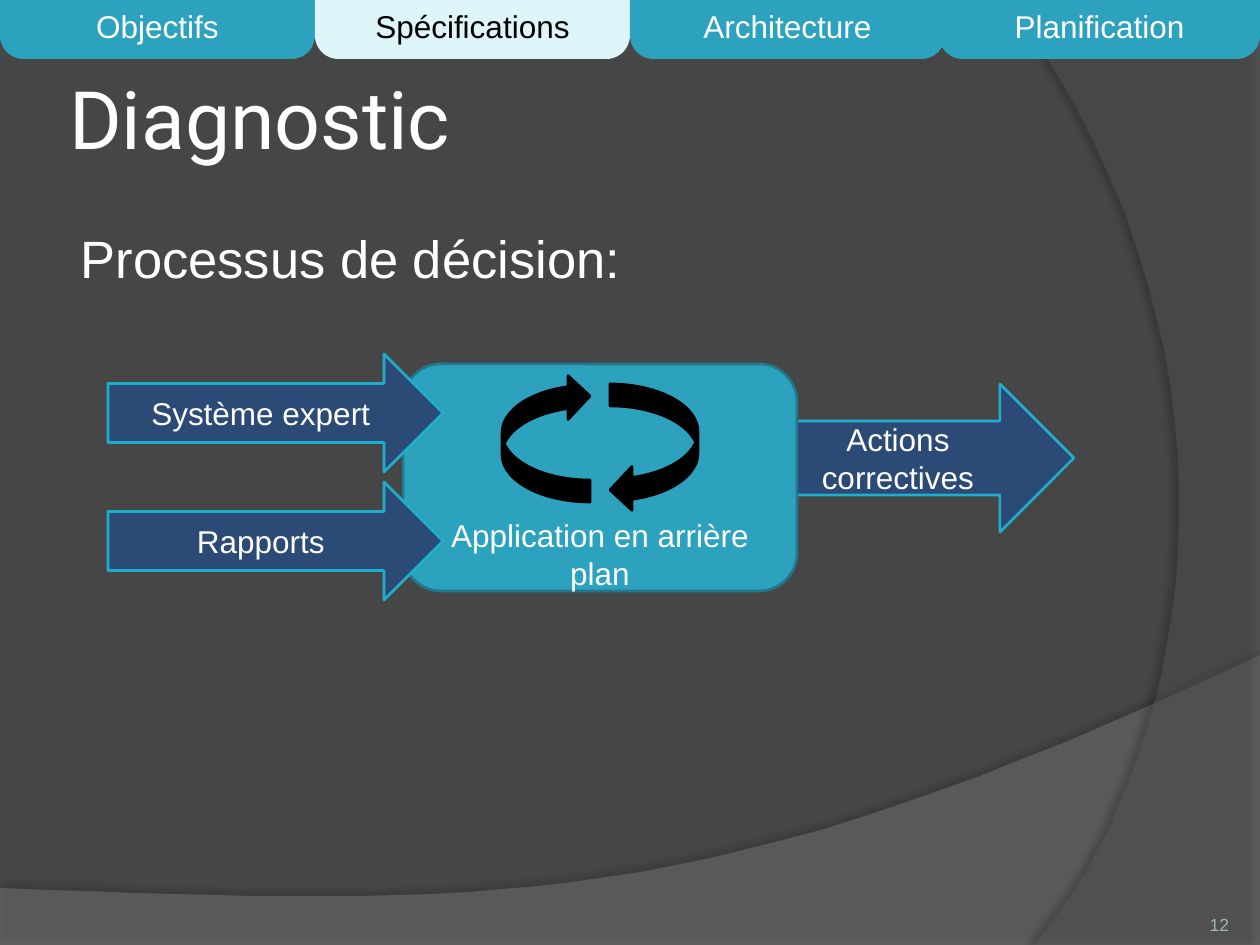
from lxml.etree import SubElement
from pptx import Presentation
from pptx.dml.color import RGBColor
from pptx.enum.shapes import MSO_SHAPE
from pptx.enum.text import MSO_ANCHOR, MSO_AUTO_SIZE, PP_ALIGN
from pptx.oxml.ns import qn
from pptx.util import Emu, Pt

SCALE = 914400 / 126
COLORS = {
    "background": "464646", "wave": "7F7F7F", "arc": "5E5E5E", "shadow": "000000",
    "teal": "2DA2BF", "teal_edge": "21788D", "navy": "2B4A76", "cyan": "1FAECD",
    "pale": "DEF5FA", "black": "000000", "white": "FFFFFF", "number": "A4B5B9",
}


def emu(px):
    return Emu(round(px * SCALE))


def rgb(name):
    return RGBColor.from_string(COLORS[name])


def bezier(start, first, second, end, steps=32):
    for step in range(steps + 1):
        t = step / steps
        u = 1 - t
        yield tuple(
            round(u**3 * a + 3 * u * u * t * b + 3 * u * t * t * c + t**3 * d)
            for a, b, c, d in zip(start, first, second, end)
        )


class Deck:
    font = "Arial"
    label_size = 18

    def __init__(self, width, height):
        self.presentation = Presentation()
        self.presentation.slide_width = emu(width)
        self.presentation.slide_height = emu(height)
        self.slide = self.presentation.slides.add_slide(self.presentation.slide_layouts[1])
        fill = self.slide.background.fill
        fill.solid()
        fill.fore_color.rgb = rgb("background")

    def paint(self, shape, fill, edge=None):
        shape.shadow.inherit = False
        shape.fill.solid()
        shape.fill.fore_color.rgb = rgb(fill)
        if edge:
            shape.line.color.rgb = rgb(edge)
            shape.line.width = Pt(1.5)
        else:
            shape.line.fill.background()

    def label(self, shape, text, size, color="white", align=PP_ALIGN.LEFT,
              anchor=MSO_ANCHOR.MIDDLE, font=None):
        frame = shape.text_frame
        frame.word_wrap = True
        frame.auto_size = MSO_AUTO_SIZE.NONE
        frame.vertical_anchor = anchor
        paragraph = frame.paragraphs[0]
        paragraph.alignment = align
        paragraph.space_before = Pt(0)
        run = paragraph.add_run()
        run.text = text
        run.font.size = Pt(size)
        run.font.name = font or self.font
        run.font.color.rgb = rgb(color)
        return paragraph

    def inset(self, shape, left, top, right, bottom):
        frame = shape.text_frame
        frame.margin_left, frame.margin_top = emu(left), emu(top)
        frame.margin_right, frame.margin_bottom = emu(right), emu(bottom)

    def decor(self, points, fill, opacity, shadow_opacity, distance, direction):
        start, *others = points
        builder = self.slide.shapes.build_freeform(*start, scale=SCALE)
        builder.add_line_segments(others, close=True)
        shape = builder.convert_to_shape()
        self.paint(shape, fill)
        properties = shape._element.spPr
        color = properties.find(qn("a:solidFill"))[0]
        SubElement(color, qn("a:alpha"), val=str(opacity * 1000))
        shadow = SubElement(
            properties.find(qn("a:effectLst")), qn("a:outerShdw"),
            blurRad=str(Pt(4)), dist=str(Pt(distance)), dir=str(direction * 60000),
            algn="ctr", rotWithShape="0")
        shadow_color = SubElement(shadow, qn("a:srgbClr"), val=COLORS["shadow"])
        SubElement(shadow_color, qn("a:alpha"), val=str(shadow_opacity * 1000))

    def place(self, placeholder, left, top, width, height):
        placeholder.left, placeholder.top = emu(left), emu(top)
        placeholder.width, placeholder.height = emu(width), emu(height)
        self.slide.shapes._spTree.append(placeholder._element)

    def title(self, text, *box):
        title = self.slide.shapes.title
        self.place(title, *box)
        self.inset(title, 6, 6, 6, 6)
        self.label(title, text, 46, font="Roboto")

    def body(self, text, *box):
        body = self.slide.placeholders[1]
        self.place(body, *box)
        paragraph = self.label(body, text, 30, anchor=MSO_ANCHOR.TOP)
        properties = paragraph._p.get_or_add_pPr()
        properties.set("marL", str(emu(58)))
        properties.set("indent", str(emu(-53)))
        SubElement(properties, qn("a:buNone"))

    def number(self, text, *box):
        number = self.slide.shapes.add_textbox(*map(emu, box))
        self.inset(number, 0, 0, 0, 0)
        self.label(number, text, 10, "number", PP_ALIGN.RIGHT, MSO_ANCHOR.BOTTOM)

    def block(self, kind, box, fill, edge=None, text=None, color="white"):
        block = self.slide.shapes.add_shape(kind, *map(emu, box))
        self.paint(block, fill, edge)
        if text:
            self.label(block, text, self.label_size, color, PP_ALIGN.CENTER)
        return block

    def arrow(self, text, *box):
        self.block(MSO_SHAPE.RIGHT_ARROW, box, "navy", "cyan", text)

    def cycle_arrow(self, left, top, rotation):
        arrow = self.block(MSO_SHAPE.CURVED_LEFT_ARROW, (left, top, 88, 128), "black", "black")
        arrow.rotation = rotation

    def tab(self, text, left, width, active):
        fill, color = ("pale", "black") if active else ("teal", "white")
        tab = self.block(MSO_SHAPE.ROUND_2_SAME_RECTANGLE, (left, 0, width, 59),
                         fill, text=text, color=color)
        tab.adjustments[0] = 0
        tab.adjustments[1] = 0.4


def main():
    deck = Deck(1260, 945)
    wave = bezier((1260, 655), (704, 919), (493, 906), (0, 888))
    deck.decor([(0, 945), (1260, 945), *wave], "wave", 45, 35, 3.5, 270)
    arc = bezier((1034, 945), (1178, 780), (1283, 378), (1008, 0))
    deck.decor([(1260, 0), (1260, 945), *arc], "arc", 40, 45, 4, 180)

    deck.arrow("Actions correctives", 759, 384, 315, 148)
    deck.title("Diagnostic", 63, 38, 1029, 158)
    deck.body("Processus de décision:", 63, 220, 784, 624)
    deck.number("12", 1124, 885, 105, 50)

    application = deck.block(MSO_SHAPE.ROUNDED_RECTANGLE, (403, 364, 394, 227),
                             "teal", "teal_edge", "Application en arrière plan")
    deck.inset(application, 13, 153, 13, 0)
    deck.cycle_arrow(610, 384, 0)
    deck.cycle_arrow(502, 374, 180)
    for row, source in enumerate(("Système expert", "Rapports")):
        deck.arrow(source, 108, 354 + row * 128, 335, 118)

    sections = ("Objectifs", "Spécifications", "Architecture", "Planification")
    for column, section in enumerate(sections):
        overlap = 6 if section == sections[-1] else 0
        deck.tab(section, column * 315 - overlap, 315 + overlap, section == "Spécifications")
    deck.presentation.save("out.pptx")


if __name__ == "__main__":
    main()
